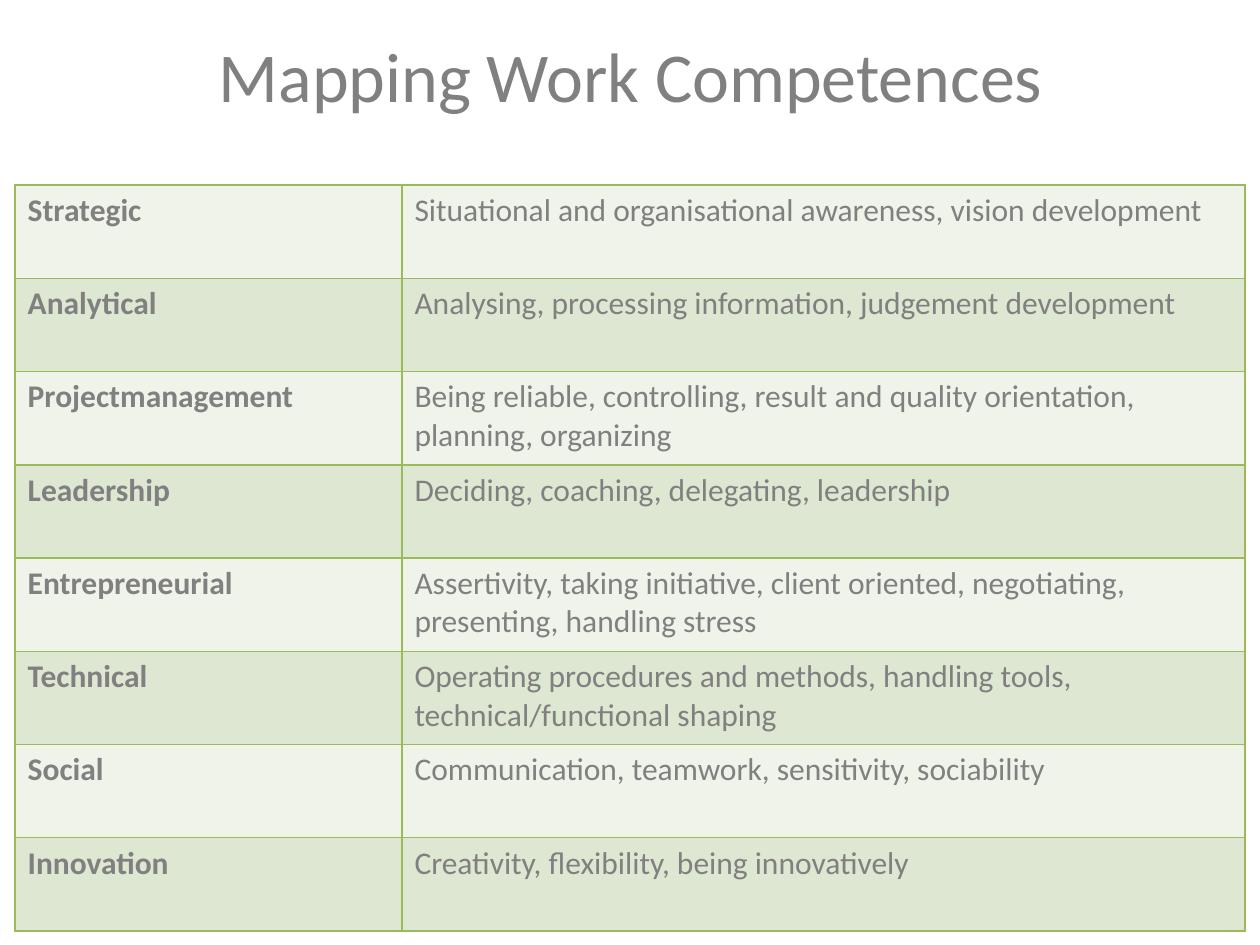
from lxml import etree
from pptx import Presentation
from pptx.dml.color import RGBColor
from pptx.enum.text import MSO_AUTO_SIZE, PP_ALIGN
from pptx.oxml.ns import qn
from pptx.util import Inches, Pt

LEFT, CENTER = PP_ALIGN.LEFT, PP_ALIGN.CENTER
GROW = MSO_AUTO_SIZE.SHAPE_TO_FIT_TEXT
GREY = RGBColor(0x80, 0x80, 0x80)
GREEN = RGBColor(0x9B, 0xBB, 0x59)
PALE = RGBColor(0xEF, 0xF3, 0xEA)
SAGE = RGBColor(0xDE, 0xE7, 0xD1)

ROWS = [
    ("Strategic", "Situational and organisational awareness, vision development"),
    ("Analytical", "Analysing, processing information, judgement development"),
    ("Projectmanagement", "Being reliable, controlling, result and quality orientation, planning, organizing"),
    ("Leadership", "Deciding, coaching, delegating, leadership"),
    ("Entrepreneurial", "Assertivity, taking initiative, client oriented, negotiating, presenting, handling stress"),
    ("Technical", "Operating procedures and methods, handling tools, technical/functional shaping"),
    ("Social", "Communication, teamwork, sensitivity, sociability"),
    ("Innovation", "Creativity, flexibility, being innovatively"),
]
WIDTHS = [3.07, 6.69]
HEIGHT = 0.74


def write(frame, text, size=18, bold=False, align=LEFT):
    para = frame.paragraphs[0]
    para.alignment = align
    run = para.add_run()
    run.text = text
    font = run.font
    font.name = "Calibri"
    font.size = Pt(size)
    font.bold = bold
    font.color.rgb = GREY


def add_borders(cell, color, width=1):
    props = cell._tc.get_or_add_tcPr()
    for side in ("lnL", "lnR", "lnT", "lnB"):
        line = etree.SubElement(props, qn("a:" + side), w=str(Pt(width)))
        fill = etree.SubElement(line, qn("a:solidFill"))
        etree.SubElement(fill, qn("a:srgbClr"), val=str(color))


deck = Presentation()
deck.slide_width, deck.slide_height = Inches(10), Inches(7.5)
slide = deck.slides.add_slide(deck.slide_layouts[6])

# Title
title = slide.shapes.add_textbox(Inches(0.2), Inches(0.21), Inches(9.61), Inches(0.77))
title.text_frame.word_wrap = True
title.text_frame.auto_size = GROW
write(title.text_frame, "Mapping Work Competences", size=40, align=CENTER)

# Competence table
table = slide.shapes.add_table(
    len(ROWS), len(WIDTHS), Inches(0.12), Inches(1.47),
    Inches(sum(WIDTHS)), Inches(HEIGHT * len(ROWS))).table
table.first_row = False
for col, width in zip(table.columns, WIDTHS):
    col.width = Inches(width)

for r, texts in enumerate(ROWS):
    table.rows[r].height = Inches(HEIGHT)
    for c, text in enumerate(texts):
        cell = table.cell(r, c)
        write(cell.text_frame, text, bold=c == 0)
        # Borders come before the fill in the cell's XML
        add_borders(cell, GREEN)
        cell.fill.solid()
        cell.fill.fore_color.rgb = SAGE if r % 2 else PALE

deck.save("out.pptx")
